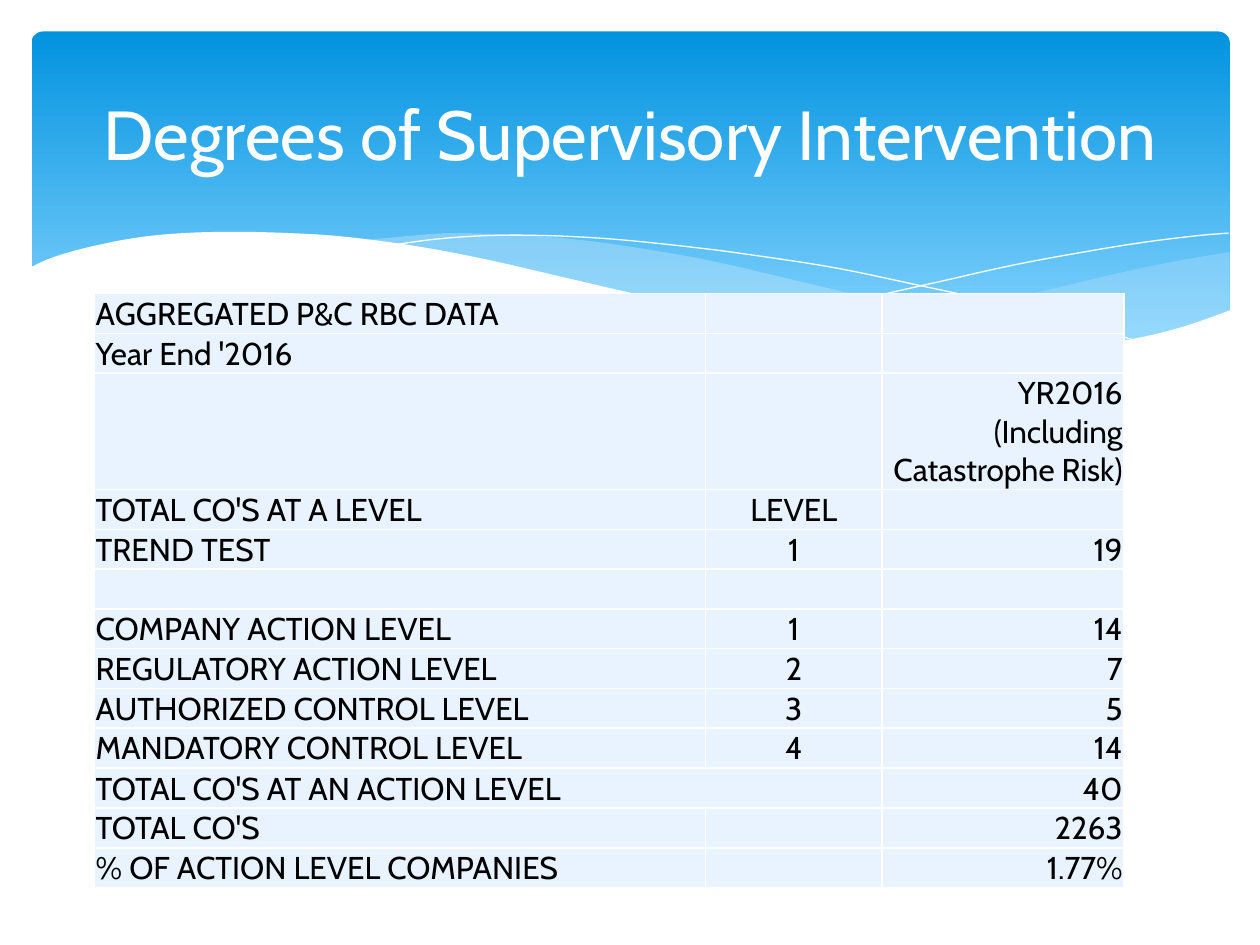
from lxml import etree
from pptx import Presentation
from pptx import util as u
from pptx.dml.color import RGBColor
from pptx.enum import shapes, text
from pptx.oxml.ns import qn

THEME = dict(font="Cabin", head=39.6, body=18, white="FFFFFF", ink="000000",
             cell="E8F3FF", top="0293E0", base="83D3FE", wave="C6E7FC")
TITLE = "Degrees of Supervisory Intervention"
ROWS = [
    ("AGGREGATED P&C RBC DATA", "", ""),
    ("Year End '2016", "", ""),
    ("", "", "YR2016 (Including Catastrophe Risk)"),
    ("TOTAL CO'S AT A LEVEL", "LEVEL", ""),
    ("TREND TEST", "1", "19"),
    ("", "", ""),
    ("COMPANY ACTION LEVEL", "1", "14"),
    ("REGULATORY ACTION LEVEL", "2", "7"),
    ("AUTHORIZED CONTROL LEVEL", "3", "5"),
    ("MANDATORY CONTROL LEVEL", "4", "14"),
    ("TOTAL CO'S AT AN ACTION LEVEL", None, "40"),
    ("TOTAL CO'S", "", "2263"),
    ("% OF ACTION LEVEL COMPANIES", "", "1.77%"),
]
COLS = [4.85, 1.4, 1.92]
HIGH = {2: 0.62, 10: 0.32, 11: 0.3}
ALIGN = [text.PP_ALIGN.LEFT, text.PP_ALIGN.CENTER, text.PP_ALIGN.RIGHT]

WAVES = [
    dict(fill="wave", alpha=29, runs=[
        [(9.76, 2), (9.35, 2.07), (8.91, 2.16), (8.32, 2.3), (7.79, 2.42),
         (7.29, 2.53), (6.61, 2.65)],
        [(6.61, 2.65), (7.05, 2.71), (7.57, 2.76), (8.03, 2.78), (8.54, 2.76),
         (8.97, 2.7), (9.35, 2.62), (9.76, 2.47)]]),
    dict(fill="wave", alpha=40, runs=[
        [(8.93, 2.73), (8.37, 2.65), (7.75, 2.54), (7.06, 2.4), (6.29, 2.22),
         (5.69, 2.08), (5.14, 1.98), (4.65, 1.91), (4.2, 1.87), (3.61, 1.85),
         (3.28, 1.87), (2.86, 1.91)],
        [(2.86, 1.91), (3.42, 1.99), (4.04, 2.11), (4.49, 2.22), (5.3, 2.4),
         (6.01, 2.55), (6.65, 2.66), (7.22, 2.74), (7.73, 2.77), (8.18, 2.78),
         (8.57, 2.77), (8.93, 2.73)]]),
    dict(line="white", runs=[
        [(3.09, 1.95), (3.44, 1.9), (3.87, 1.87), (4.33, 1.87), (4.89, 1.9),
         (5.56, 1.97), (6.08, 2.04), (6.65, 2.13), (7.27, 2.26), (7.95, 2.41),
         (8.69, 2.61), (9.07, 2.72)]]),
    dict(line="white", runs=[
        [(6.13, 2.57), (6.53, 2.46), (6.95, 2.35), (7.48, 2.23), (8.06, 2.1),
         (8.66, 1.99), (9.1, 1.92), (9.51, 1.87), (9.75, 1.85)]]),
    dict(fill="white", runs=[
        [(9.77, 2.46), (9.4, 2.59), (8.99, 2.69), (8.5, 2.75), (8.09, 2.77),
         (7.61, 2.75), (7.08, 2.7), (6.48, 2.62), (5.79, 2.5), (5.03, 2.33),
         (4.47, 2.2), (3.91, 2.07), (3.4, 1.97), (2.92, 1.9), (2.5, 1.86),
         (1.93, 1.84), (1.46, 1.85), (1.06, 1.89), (0.67, 1.97), (0.4, 2.05),
         (0.23, 2.13)],
        [(0.23, 3.29), (9.77, 3.29)]]),
]


def hue(key):
    return RGBColor.from_string(THEME[key])


def write(frame, words, size="body", color="ink", align=ALIGN[0]):
    para = frame.paragraphs[0]
    para.alignment = align
    run = para.add_run()
    run.text = words
    run.font.name = THEME["font"]
    run.font.size = u.Pt(THEME[size])
    run.font.color.rgb = hue(color)


def smooth(run, steps=5):
    if len(run) < 3:
        return run
    ends = [run[0]] + run + [run[-1]]
    out = [run[0]]
    for a, b, c, d in zip(ends, ends[1:], ends[2:], ends[3:]):
        for t in (n / steps for n in range(1, steps + 1)):
            out.append(tuple(
                q + t * (r - p + t * (2 * p - 5 * q + 4 * r - s
                                      + t * (3 * q - p - 3 * r + s))) / 2
                for p, q, r, s in zip(a, b, c, d)))
    return out


def band(slide):
    box = slide.shapes.add_shape(shapes.MSO_SHAPE.ROUNDED_RECTANGLE, u.Inches(0.25),
                                 u.Inches(0.25), u.Inches(9.51), u.Inches(2.7))
    box.adjustments[0] = 0.034
    box.shadow.inherit = False
    box.line.fill.background()
    box.fill.gradient()
    box.fill.gradient_angle = 270
    for stop, key, pos in zip(box.fill.gradient_stops, ("top", "base"), (0, 0.9)):
        stop.color.rgb = hue(key)
        stop.position = pos


def wave(slide, runs, fill=None, alpha=None, line=None):
    dots = [(u.Inches(x), u.Inches(y)) for run in runs for x, y in smooth(run)]
    pen = slide.shapes.build_freeform(*dots[0])
    pen.add_line_segments(dots[1:], close=fill is not None)
    form = pen.convert_to_shape()
    form.shadow.inherit = False
    if fill:
        form.fill.solid()
        form.fill.fore_color.rgb = hue(fill)
        form.line.fill.background()
    else:
        form.fill.background()
        form.line.color.rgb = hue(line)
        form.line.width = u.Pt(0)
    if alpha:
        tint = form._element.spPr.find(qn("a:solidFill"))[0]
        etree.SubElement(tint, qn("a:alpha"), val=str(alpha * 1000))


def border(cell):
    props = cell._tc.get_or_add_tcPr()
    for n, side in enumerate(("lnL", "lnR", "lnT", "lnB")):
        edge = etree.Element(qn("a:" + side), w=str(u.Pt(1)))
        fill = etree.SubElement(edge, qn("a:solidFill"))
        etree.SubElement(fill, qn("a:srgbClr"), val=THEME["white"])
        props.insert(n, edge)


def grid(slide):
    highs = [HIGH.get(n, 0.3) for n in range(len(ROWS))]
    table = slide.shapes.add_table(len(ROWS), len(COLS), u.Inches(0.75), u.Inches(2.33),
                                   u.Inches(sum(COLS)), u.Inches(sum(highs))).table
    table.first_row = table.horz_banding = False
    for col, wide in zip(table.columns, COLS):
        col.width = u.Inches(wide)
    for r, (row, high) in enumerate(zip(ROWS, highs)):
        table.rows[r].height = u.Inches(high)
        for c, words in enumerate(row):
            cell = table.cell(r, c)
            cell.margin_left = cell.margin_right = cell.margin_top = u.Inches(0.01)
            cell.margin_bottom = 0
            cell.vertical_anchor = text.MSO_ANCHOR.BOTTOM
            cell.fill.solid()
            cell.fill.fore_color.rgb = hue("cell")
            border(cell)
            if words:
                write(cell.text_frame, words, align=ALIGN[c])
            elif words is None:
                table.cell(r, c - 1).merge(cell)


def main():
    deck = Presentation()
    deck.slide_width, deck.slide_height = u.Inches(10), u.Inches(7.5)
    slide = deck.slides.add_slide(deck.slide_layouts[5])
    band(slide)
    for item in WAVES:
        wave(slide, **item)
    title = slide.shapes.title
    title.left, title.top = u.Inches(0.5), u.Inches(0.37)
    title.width, title.height = u.Inches(9), u.Inches(1.37)
    title.text_frame.vertical_anchor = text.MSO_ANCHOR.MIDDLE
    write(title.text_frame, TITLE, size="head", color="white", align=ALIGN[1])
    slide.shapes._spTree.append(title._element)
    grid(slide)
    deck.save("out.pptx")


if __name__ == "__main__":
    main()
